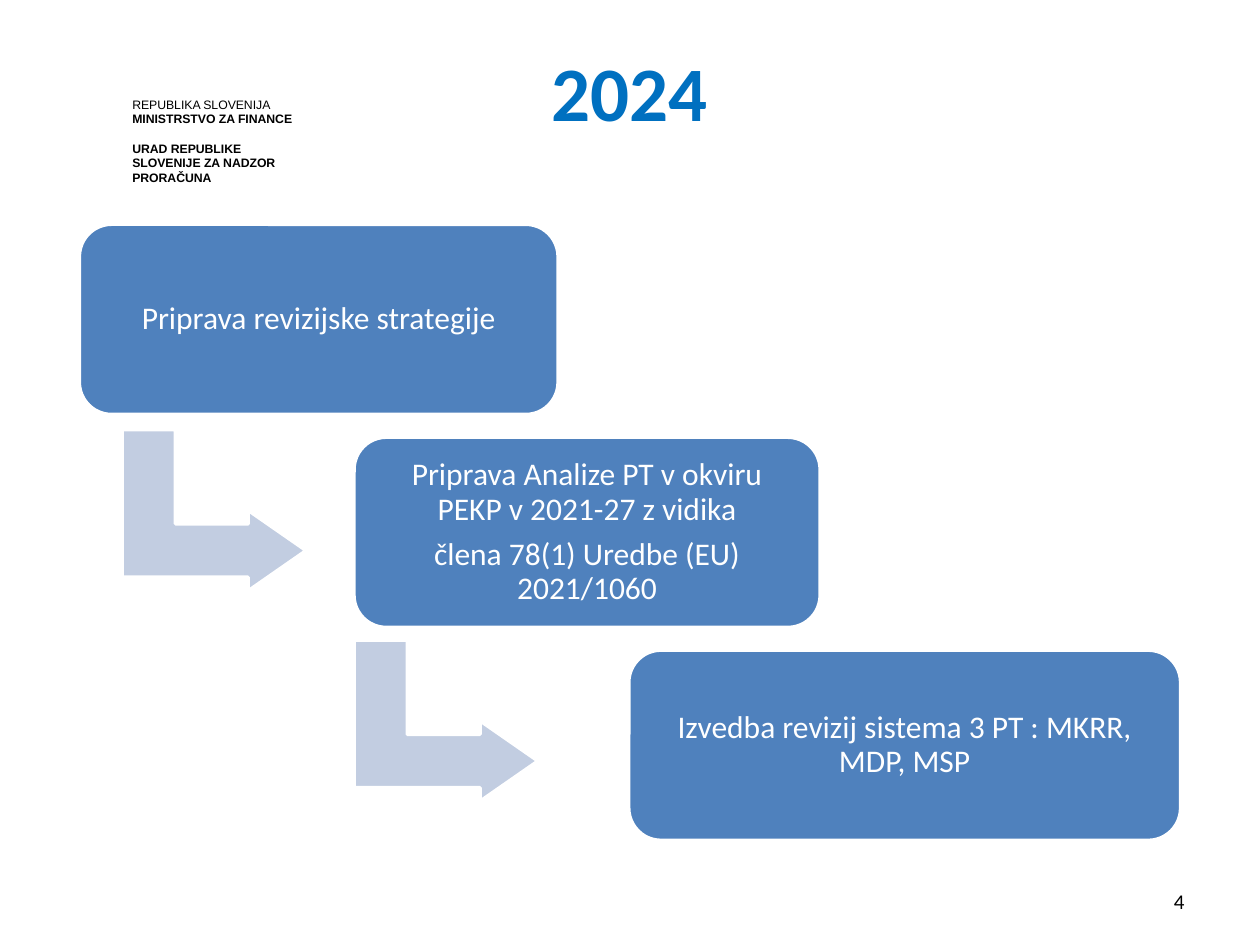
from pptx import Presentation, util as u
from pptx.dml.color import RGBColor
from pptx.enum import shapes, text

In, Pt = u.Inches, u.Pt
AL, ANC = text.PP_ALIGN, text.MSO_ANCHOR
MARGINS = ("margin_left", "margin_top", "margin_right", "margin_bottom")
STEPS = [
    (0.63, 3.8, ["Priprava revizijske strategije"]),
    (2.81, 3.7, ["Priprava Analize PT v okviru PEKP v 2021-27 z vidika",
                 "člena 78(1) Uredbe (EU) 2021/1060"]),
    (4.99, 4.38, ["Izvedba revizij sistema 3 PT : MKRR, MDP, MSP"]),
]
ARROW_LEFTS = [1.06, 2.9]


def rgb(value):
    """Turn a hex string into a colour."""
    return RGBColor.from_string(value)


def assign(obj, values):
    """Set attributes of an object from a dict."""
    for name, value in values.items():
        setattr(obj, name, value)


def write(tf, lines, color, font, para, frame):
    """Fill a text frame with one formatted paragraph per line."""
    assign(tf, {"word_wrap": True, **frame})
    for i, line in enumerate(lines):
        p = tf.paragraphs[0] if i == 0 else tf.add_paragraph()
        assign(p, para)
        r = p.add_run()
        r.text = line
        assign(r.font, font)
        r.font.color.rgb = rgb(color)


def add_block(s, kind, box, fill, adjustments):
    """Add a filled shape with a white outline."""
    sp = s.shapes.add_shape(kind, *map(In, box))
    sp.shadow.inherit = False
    sp.fill.solid()
    sp.fill.fore_color.rgb = rgb(fill)
    sp.line.color.rgb = rgb("FFFFFF")
    sp.line.width = Pt(2)
    for i, value in enumerate(adjustments):
        sp.adjustments[i] = value
    return sp


def add_letterhead(s, box):
    """Place the ministry and office names."""
    tf = s.shapes.add_textbox(*map(In, box)).text_frame
    lines = ["REPUBLIKA SLOVENIJA", "MINISTRSTVO ZA FINANCE",
             "URAD REPUBLIKE SLOVENIJE ZA NADZOR PRORAČUNA"]
    write(tf, lines, "000000", {"size": Pt(7), "name": "Arial", "bold": True},
          {"line_spacing": Pt(8.4)}, dict.fromkeys(MARGINS, 0))
    first, *_, office = tf.paragraphs
    first.runs[0].font.bold = False
    office.space_before = Pt(8.4)


def add_title(s, box, title):
    """Move and format the title placeholder."""
    sp = s.shapes.title
    assign(sp, dict(zip(("left", "top", "width", "height"), map(In, box))))
    write(sp.text_frame, [title], "0070C0",
          {"size": Pt(44), "name": "Calibri", "bold": True},
          {"alignment": AL.CENTER}, {"vertical_anchor": ANC.TOP})


def add_steps(s, top, height, pitch):
    """Place the descending steps and the bent arrows between them."""
    for i, (left, width, lines) in enumerate(STEPS):
        y = top + i * pitch
        if i < len(ARROW_LEFTS):
            arrow = add_block(s, shapes.MSO_SHAPE.BENT_UP_ARROW,
                              (ARROW_LEFTS[i], 3.32 + i * 1.67, 1.28, 1.46),
                              "C2CDE1", (0.33, 0.25, 0.36))
            arrow.rotation = 90
        sp = add_block(s, shapes.MSO_SHAPE.ROUNDED_RECTANGLE,
                       (left, y, width, height), "4F81BD", [0.17])
        write(sp.text_frame, lines, "FFFFFF",
              {"size": Pt(18), "name": "Calibri"},
              {"alignment": AL.CENTER, "line_spacing": 0.9, "space_after": Pt(6.3)},
              {"vertical_anchor": ANC.MIDDLE, **dict.fromkeys(MARGINS, In(0.14))})


def add_page_number(s, box, number):
    """Place the page number at the lower right."""
    tf = s.shapes.add_textbox(*map(In, box)).text_frame
    write(tf, [number], "000000", {"size": Pt(12), "name": "Calibri"},
          {"alignment": AL.RIGHT}, {"vertical_anchor": ANC.MIDDLE})


def main():
    """Build and save the slide."""
    prs = Presentation()
    assign(prs, {"slide_width": In(10), "slide_height": In(7.5)})
    s = prs.slides.add_slide(prs.slide_layouts[5])
    add_letterhead(s, (1.05, 0.77, 1.32, 0.56))
    add_title(s, (0.5, 0.3, 9, 1.25), "2024")
    add_steps(s, 1.78, 1.51, 1.69)
    add_page_number(s, (7.17, 6.95, 2.33, 0.4), "4")
    prs.save("out.pptx")


if __name__ == "__main__":
    main()
